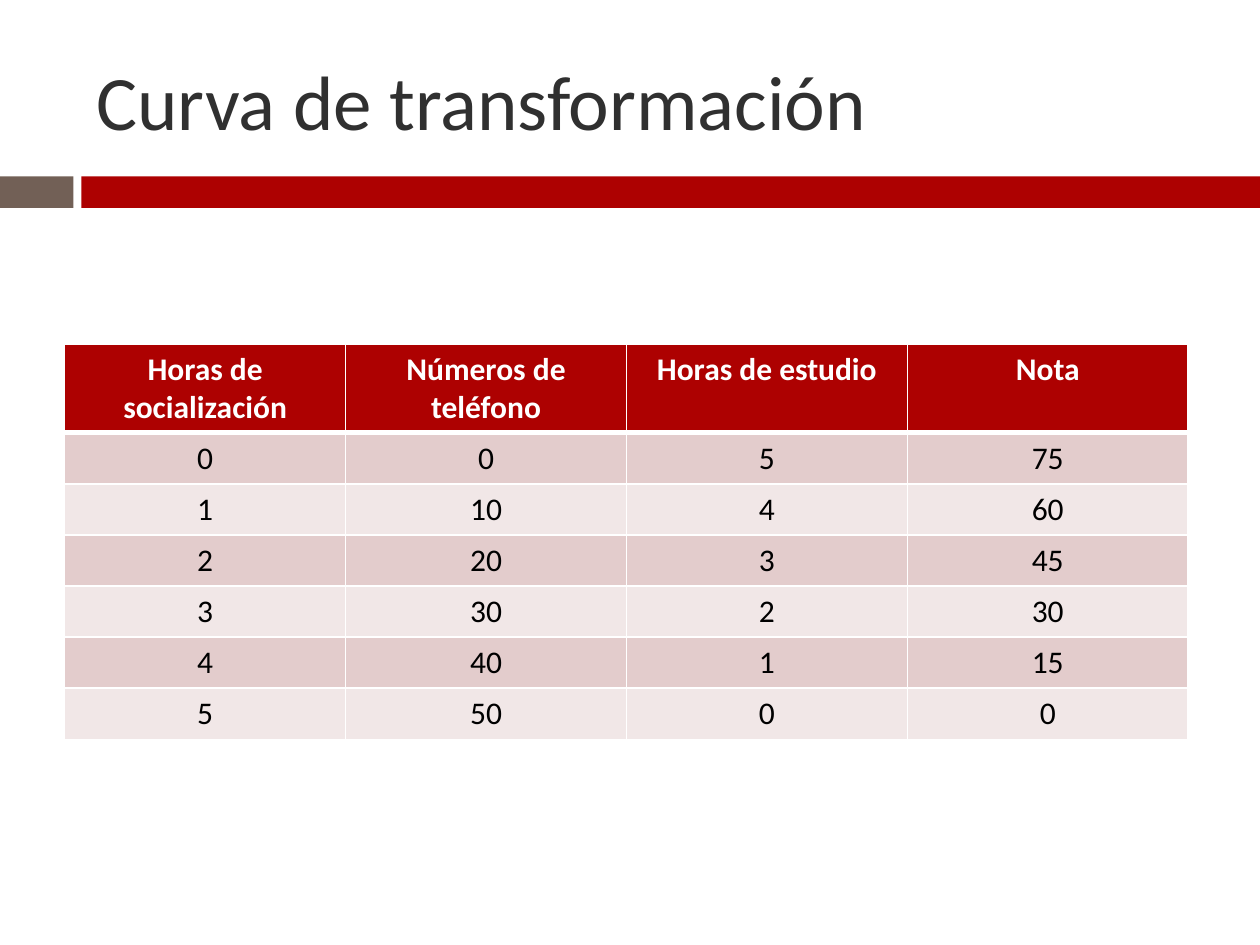
"""Build the slide "Curva de transformación" with its data table."""
from lxml import etree
from pptx import Presentation
from pptx.dml.color import RGBColor
from pptx.enum.shapes import MSO_SHAPE
from pptx.enum.text import MSO_ANCHOR, PP_ALIGN
from pptx.oxml.ns import qn
from pptx.util import Pt

RECTANGLE = MSO_SHAPE.RECTANGLE
MIDDLE = MSO_ANCHOR.MIDDLE
LEFT, CENTER = PP_ALIGN.LEFT, PP_ALIGN.CENTER

RED = RGBColor(0xAD, 0x01, 0x01)
BROWN = RGBColor(0x72, 0x60, 0x56)
CHARCOAL = RGBColor(0x30, 0x30, 0x30)
DARK_BAND = RGBColor(0xE3, 0xCC, 0xCC)
LIGHT_BAND = RGBColor(0xF1, 0xE7, 0xE7)
WHITE = RGBColor(0xFF, 0xFF, 0xFF)
BLACK = RGBColor(0x00, 0x00, 0x00)

TITLE = "Curva de transformación"
HEADERS = ("Horas de socialización", "Números de teléfono", "Horas de estudio", "Nota")
RECORDS = [
    (0, 0, 5, 75),
    (1, 10, 4, 60),
    (2, 20, 3, 45),
    (3, 30, 2, 30),
    (4, 40, 1, 15),
    (5, 50, 0, 0),
]

PAGE_WIDTH, PAGE_HEIGHT = 720, 540
BAR_TOP, BAR_HEIGHT = 100.8, 18
BARS = [(0, 42, BROWN), (46.5, PAGE_WIDTH - 46.5, RED)]
TITLE_BOX = (48, 18, 642, 78)
TABLE_LEFT, TABLE_TOP, COLUMN_WIDTH = 37, 196.5, 160.5
HEADER_HEIGHT, ROW_HEIGHT = 50.8, 29.2
THIN, THICK = 1, 3

TITLE_FORMAT = {"name": "Calibri", "size": Pt(44), "bold": False}
HEADER_FORMAT = {"name": "Calibri", "size": Pt(18), "bold": True}
BODY_FORMAT = {**HEADER_FORMAT, "bold": False}


def write(frame, text, style, color, alignment):
    para = frame.paragraphs[0]
    para.alignment = alignment
    span = para.add_run()
    span.text = text
    for name, value in style.items():
        setattr(span.font, name, value)
    span.font.color.rgb = color


def add_borders(cell, widths):
    properties = cell._tc.get_or_add_tcPr()
    for side, width in widths.items():
        line = etree.SubElement(properties, qn(f"a:ln{side}"), w=str(Pt(width)))
        fill = etree.SubElement(line, qn("a:solidFill"))
        etree.SubElement(fill, qn("a:srgbClr"), val=str(WHITE))


def add_bars(page):
    for left, width, color in BARS:
        bar = page.shapes.add_shape(
            RECTANGLE, Pt(left), Pt(BAR_TOP), Pt(width), Pt(BAR_HEIGHT))
        bar.shadow.inherit = False
        bar.fill.solid()
        bar.fill.fore_color.rgb = color
        bar.line.fill.background()


def add_title(page):
    frame = page.shapes.add_textbox(*map(Pt, TITLE_BOX)).text_frame
    frame.word_wrap = True
    frame.vertical_anchor = MIDDLE
    write(frame, TITLE, TITLE_FORMAT, CHARCOAL, LEFT)


def add_data_table(page):
    rows = [HEADERS, *RECORDS]
    heights = [HEADER_HEIGHT] + [ROW_HEIGHT] * len(RECORDS)
    table = page.shapes.add_table(
        len(rows), len(HEADERS), Pt(TABLE_LEFT), Pt(TABLE_TOP),
        Pt(COLUMN_WIDTH * len(HEADERS)), Pt(sum(heights))).table
    for column in table.columns:
        column.width = Pt(COLUMN_WIDTH)
    for index, (values, height) in enumerate(zip(rows, heights)):
        table.rows[index].height = Pt(height)
        if index == 0:
            style, color, fill = HEADER_FORMAT, WHITE, RED
        else:
            style, color = BODY_FORMAT, BLACK
            fill = DARK_BAND if index % 2 else LIGHT_BAND
        widths = {"L": THIN, "R": THIN,
                  "T": THICK if index == 1 else THIN,
                  "B": THICK if index == 0 else THIN}
        for cell, value in zip(table.rows[index].cells, values):
            add_borders(cell, widths)
            cell.fill.solid()
            cell.fill.fore_color.rgb = fill
            write(cell.text_frame, str(value), style, color, CENTER)


def main():
    deck = Presentation()
    deck.slide_width, deck.slide_height = Pt(PAGE_WIDTH), Pt(PAGE_HEIGHT)
    page = deck.slides.add_slide(deck.slide_layouts[6])
    add_bars(page)
    add_title(page)
    add_data_table(page)
    deck.save("out.pptx")


if __name__ == "__main__":
    main()
